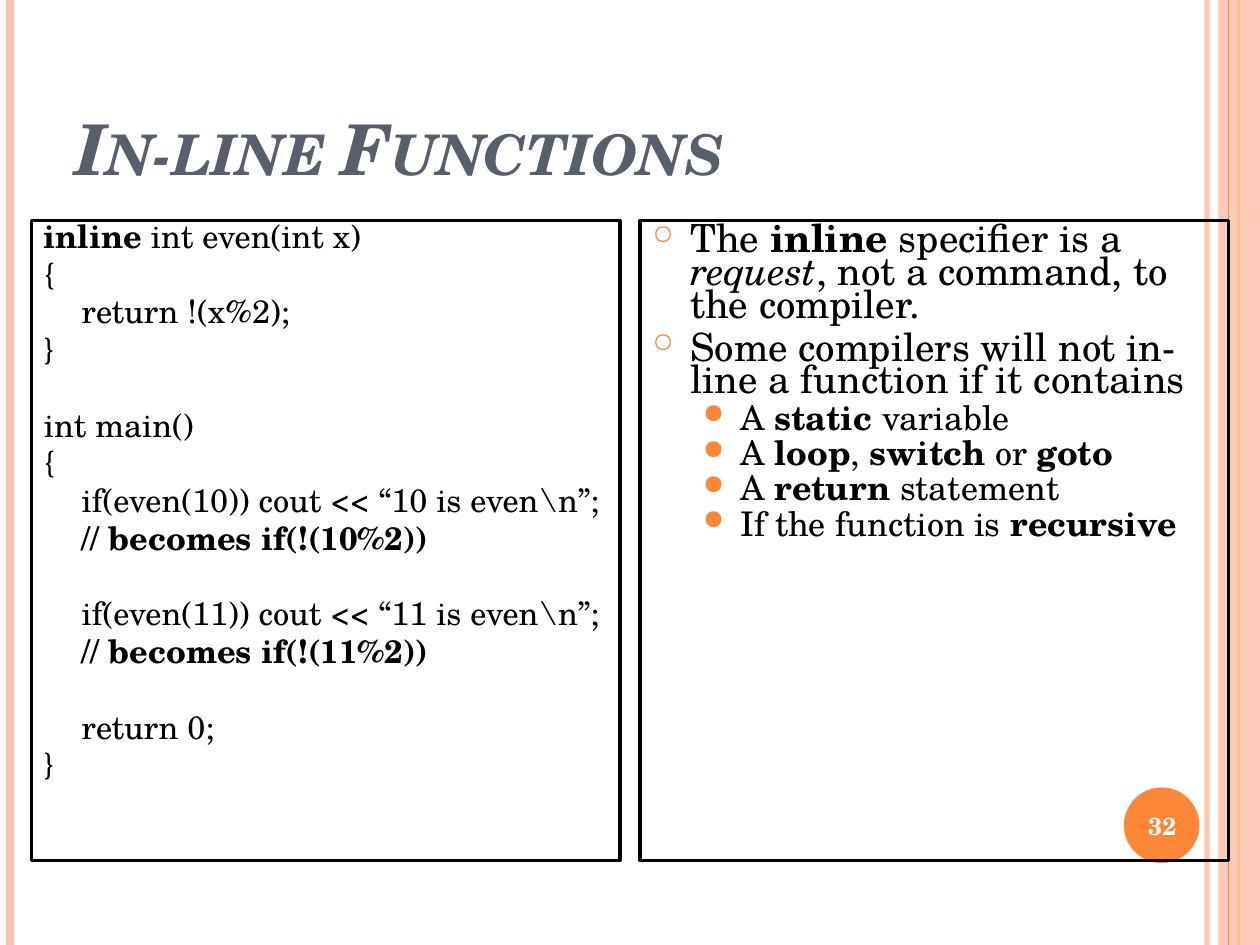
from lxml.etree import SubElement
from pptx import Presentation
from pptx.dml.color import RGBColor
from pptx.enum.shapes import MSO_CONNECTOR, MSO_SHAPE
from pptx.enum.text import MSO_ANCHOR, PP_ALIGN
from pptx.oxml.ns import qn
from pptx.util import Inches, Pt

FONT = "TeX Gyre Schola"
COLORS = {"black": "000000", "white": "FFFFFF", "title": "575F6D",
          "orange": "FE8637", "peach": "FEC3AE"}

# In the texts, *...* is bold and _..._ is italic.
TITLE = "*_In-line Functions_*"
PAGE_NUMBER = "*32*"
# (indent level, text, blank line above)
CODE = [
    (0, "*inline* int even(int x)", False),
    (0, "{", False),
    (1, "return !(x%2);", False),
    (0, "}", False),
    (0, "int main()", True),
    (0, "{", False),
    (1, "if(even(10)) cout << “10 is even\\n”;", False),
    (1, "*// becomes if(!(10%2))*", False),
    (1, "if(even(11)) cout << “11 is even\\n”;", True),
    (1, "*// becomes if(!(11%2))*", False),
    (1, "return 0;", True),
    (0, "}", False),
]
# (bullet level, text)
NOTES = [
    (0, "The *inline* specifier is a _request_, not a command, to the compiler."),
    (0, "Some compilers will not in-line a function if it contains"),
    (1, "A *static* variable"),
    (1, "A *loop*, *switch* or *goto*"),
    (1, "A *return* statement"),
    (1, "If the function is *recursive*"),
]
BULLETS = [
    {"char": "○", "percent": 70, "left": 0.3, "size": 22.2, "before": 6},
    {"char": "●", "percent": 80, "left": 0.7, "size": 19.4, "before": 3.9},
]
# (x, colour, width in points, opacity in percent)
STRIPES_BEHIND = [(9.58, "peach", 3, 93), (0.08, "peach", 4.5, 100),
                  (9.83, "orange", 1.5, 100)]
STRIPES_FRONT = [(9.75, "orange", 0.75, 100)]

HANG = 0.3
LINE_SPACING = 0.7
CODE_SIZE = 18.5
CODE_BEFORE = 6
CODE_PITCH = CODE_SIZE * 1.2 * LINE_SPACING + CODE_BEFORE
PANEL_TOP, PANEL_W, PANEL_H = 1.75, 4.67, 5.08


def rgb(name):
    return RGBColor.from_string(COLORS[name])


def set_opacity(fill_parent, percent):
    if percent < 100:
        color = fill_parent.find(".//" + qn("a:srgbClr"))
        SubElement(color, qn("a:alpha"), val=str(percent * 1000))


def add_stripe(slide, x, color, width, opacity):
    c = slide.shapes.add_connector(MSO_CONNECTOR.STRAIGHT, Inches(x), 0,
                                   Inches(x), Inches(7.5))
    c.line.color.rgb = rgb(color)
    c.line.width = Pt(width)
    sp_pr = c._element.spPr
    set_opacity(sp_pr, opacity)
    SubElement(sp_pr, qn("a:effectLst"))


def add_solid(slide, kind, box, color, opacity=100):
    s = slide.shapes.add_shape(kind, *map(Inches, box))
    s.shadow.inherit = False
    s.fill.solid()
    s.fill.fore_color.rgb = rgb(color)
    s.line.fill.background()
    set_opacity(s._element.spPr, opacity)


def add_text_box(slide, box, anchor=MSO_ANCHOR.TOP):
    s = slide.shapes.add_textbox(*map(Inches, box))
    s.text_frame.word_wrap = True
    s.text_frame.vertical_anchor = anchor
    return s


def add_panel(slide, left):
    s = add_text_box(slide, (left, PANEL_TOP, PANEL_W, PANEL_H))
    s.line.color.rgb = rgb("black")
    s.line.width = Pt(2)
    return s.text_frame


def write(p, text, size, color="black"):
    """Fill a paragraph with runs, following the * and _ marks."""
    for i, chunk in enumerate(text.split("*")):
        for j, piece in enumerate(chunk.split("_")):
            if piece:
                r = p.add_run()
                r.text = piece
                r.font.color.rgb = rgb(color)
                values = {"name": FONT, "size": Pt(size),
                          "bold": i % 2 == 1, "italic": j % 2 == 1}
                for name, value in values.items():
                    setattr(r.font, name, value)


def next_paragraph(tf, before, left, indent):
    first = tf.paragraphs[0]
    p = tf.add_paragraph() if first.runs else first
    p.line_spacing = LINE_SPACING
    p.space_before = Pt(before)
    p_pr = p._p.get_or_add_pPr()
    p_pr.set("marL", str(Inches(left)))
    p_pr.set("indent", str(Inches(indent)))
    return p


def add_bullet(p, char, percent):
    p_pr = p._p.get_or_add_pPr()
    color = SubElement(p_pr, qn("a:buClr"))
    SubElement(color, qn("a:srgbClr"), val=COLORS["orange"])
    SubElement(p_pr, qn("a:buSzPct"), val=str(percent * 1000))
    SubElement(p_pr, qn("a:buChar"), char=char)


prs = Presentation()
prs.slide_width, prs.slide_height = Inches(10), Inches(7.5)
slide = prs.slides.add_slide(prs.slide_layouts[6])

for stripe in STRIPES_BEHIND:
    add_stripe(slide, *stripe)
add_solid(slide, MSO_SHAPE.RECTANGLE, (9.67, 0, 0.33, 7.5), "peach", 87)
for stripe in STRIPES_FRONT:
    add_stripe(slide, *stripe)
add_solid(slide, MSO_SHAPE.OVAL, (8.92, 6.25, 0.6, 0.6), "orange")

title = add_text_box(slide, (0.5, 0.3, 8.17, 1.25), MSO_ANCHOR.BOTTOM)
p = title.text_frame.paragraphs[0]
write(p, TITLE, 40, "title")
p.runs[0].font._element.set("cap", "small")

number = add_text_box(slide, (8.89, 6.27, 0.67, 0.57), MSO_ANCHOR.MIDDLE)
p = number.text_frame.paragraphs[0]
p.alignment = PP_ALIGN.CENTER
write(p, PAGE_NUMBER, 14, "white")

tf = add_panel(slide, 0.25)
for level, text, blank_above in CODE:
    before = CODE_BEFORE + (CODE_PITCH if blank_above else 0)
    write(next_paragraph(tf, before, HANG * level, 0), text, CODE_SIZE)

tf = add_panel(slide, 5.08)
for level, text in NOTES:
    b = BULLETS[level]
    p = next_paragraph(tf, b["before"], b["left"], -HANG)
    p.level = level
    add_bullet(p, b["char"], b["percent"])
    write(p, text, b["size"])

prs.save("out.pptx")
